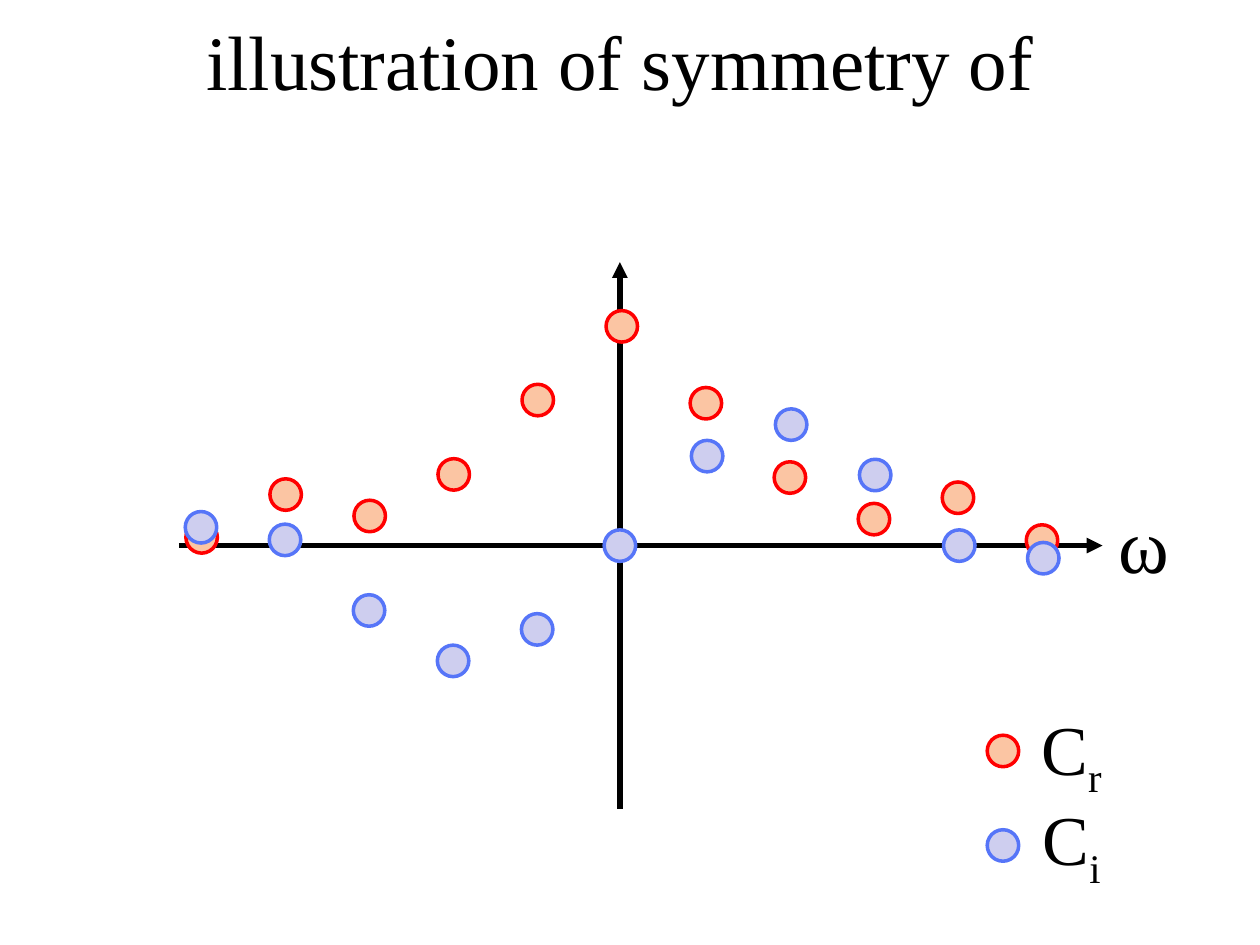
from lxml import etree
from pptx import Presentation, util as u
from pptx.dml.color import RGBColor
from pptx.enum import shapes, text
from pptx.oxml.ns import qn

# The page is a grid of 100 columns by 75 rows
COLUMNS, ROWS = 100, 75
FONT = "Times New Roman"
DOT = 2.5          # dot diameter
STEP = 6.67        # columns between neighbouring frequencies
REAL = ("FBC5A3", "FF0000")
IMAGINARY = ("CECEEF", "5675F8")

# Rows above the axis, for frequency 0, 1, 2, ...
REAL_VALUES = [17.4, 11.3, 5.4, 2.1, 3.8, 0.4]
IMAGINARY_VALUES = [0, 7.1, 9.6, 5.6, 0, -1]

deck = Presentation()
deck.slide_width, deck.slide_height = u.Inches(10), u.Inches(7.5)


def col(count):
    return round(deck.slide_width * count / COLUMNS)


def row(count):
    return round(deck.slide_height * count / ROWS)


def color(value):
    return RGBColor.from_string(value)


def add_text(page, box, size, runs):
    """Centred text in the box; each run is (words, baseline shift)."""
    left, top, width, height = box
    frame = page.shapes.add_textbox(col(left), row(top), col(width), row(height)).text_frame
    frame.word_wrap = True
    frame.vertical_anchor = text.MSO_ANCHOR.MIDDLE
    para = frame.paragraphs[0]
    para.alignment = text.PP_ALIGN.CENTER
    for words, baseline in runs:
        span = para.add_run()
        span.text = words
        span.font.name, span.font.size = FONT, u.Pt(size)
        span.font.color.rgb = color("000000")
        if baseline:
            span.font._element.set("baseline", str(baseline * 1000))


def add_axis(page, start, end):
    """Black line with an arrowhead at its end."""
    axis = page.shapes.add_connector(
        shapes.MSO_CONNECTOR.STRAIGHT, col(start[0]), row(start[1]), col(end[0]), row(end[1]))
    axis.line.color.rgb = color("000000")
    axis.line.width = u.Pt(3)
    etree.SubElement(axis.line._get_or_add_ln(), qn("a:tailEnd"), type="triangle")
    etree.SubElement(axis._element.spPr, qn("a:effectLst"))


def add_dot(page, x, y, colors):
    """Dot centred on the given column and row."""
    dot = page.shapes.add_shape(
        shapes.MSO_SHAPE.OVAL, col(x - DOT / 2), row(y - DOT / 2), col(DOT), row(DOT))
    dot.shadow.inherit = False
    dot.fill.solid()
    dot.fill.fore_color.rgb = color(colors[0])
    dot.line.color.rgb = color(colors[1])
    dot.line.width = u.Pt(2)


def add_plot(page, box):
    left, top, width, height = box
    origin_x, origin_y = left + 35, top + 22.5

    # Axes
    add_axis(page, (origin_x, top + height), (origin_x, top))
    add_axis(page, (left, origin_y), (left + width, origin_y))

    # Real part: even about frequency 0, left half slightly raised
    for k, value in enumerate(REAL_VALUES):
        add_dot(page, origin_x + 0.15 + k * STEP, origin_y - value, REAL)
        if k:
            add_dot(page, origin_x + 0.15 - k * STEP, origin_y - value - 0.25, REAL)

    # Imaginary part: odd about frequency 0, left half slightly raised
    for k, value in enumerate(IMAGINARY_VALUES):
        shift = 0.25 if k else 0
        add_dot(page, origin_x + shift + k * STEP, origin_y - value, IMAGINARY)
        if k:
            add_dot(page, origin_x + 0.1 - k * STEP, origin_y + value - 0.45, IMAGINARY)

    # Name of the frequency axis
    add_text(page, (left + width - 2.6, origin_y - 5, 11.7, 9.5), 44, [("ω", 0)])


def add_legend(page, box):
    left, top, width, height = box
    entry_height = height / 2
    for index, (part, colors) in enumerate([("r", REAL), ("i", IMAGINARY)]):
        add_dot(page, left + 2.9, top + 4.6 + index * 7.5, colors)
        add_text(page, (left, top + index * 7.2, width, entry_height), 40,
                 [("C", 0), (part, -25)])


def add_symmetry_page():
    page = deck.slides.add_slide(deck.slide_layouts[6])
    add_plot(page, (14.2, 20.8, 73.3, 43.4))
    add_legend(page, (76.7, 55, 16.7, 19))
    add_text(page, (0, 0, COLUMNS, 9.5), 44, [("illustration of symmetry of ", 0)])


add_symmetry_page()
deck.save("out.pptx")
